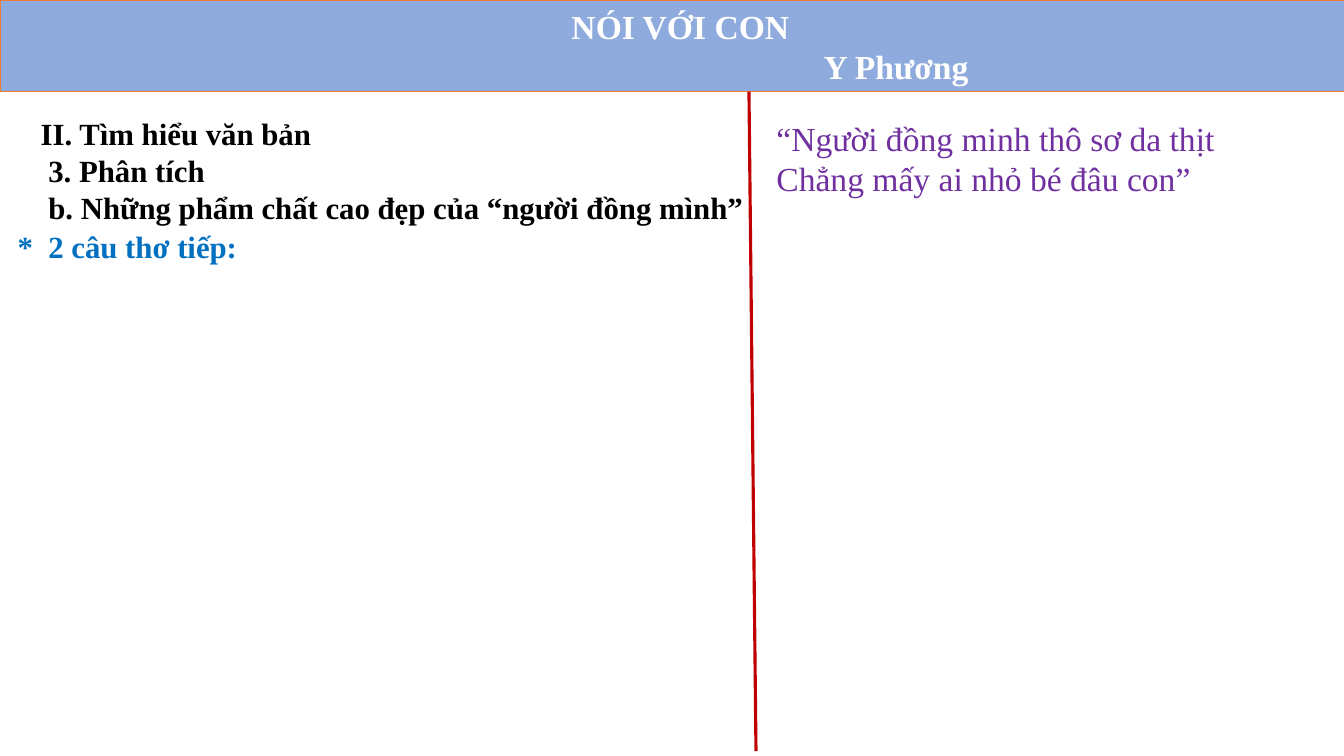
from pptx import Presentation
from pptx.dml.color import RGBColor
from pptx.enum.shapes import MSO_CONNECTOR
from pptx.enum.text import MSO_ANCHOR, MSO_AUTO_SIZE, PP_ALIGN
from pptx.util import Pt
from lxml import etree

COLORS = {"bar": "8FAADC", "bar_line": "ED7D31", "divider": "C00000",
          "title": "FFFFFF", "heading": "000000", "point": "0070C0", "poem": "7030A0"}
NS = "http://schemas.openxmlformats.org/drawingml/2006/main"


def rgb(name):
    return RGBColor.from_string(COLORS[name])


def write(tf, lines, size, color, bold, align):
    """Fill a text frame; each line is (text, left margin, first-line indent)."""
    tf.word_wrap = True
    tf.auto_size = MSO_AUTO_SIZE.NONE
    for i, (text, margin, indent) in enumerate(lines):
        p = tf.paragraphs[0] if i == 0 else tf.add_paragraph()
        p.text = text
        p.alignment = align
        p.line_spacing = 1.0
        p.font.name = "Times New Roman"
        p.font.size = Pt(size)
        p.font.bold = bold
        p.font.color.rgb = rgb(color)
        pPr = p._p.get_or_add_pPr()
        pPr.set("marL", str(Pt(margin)))
        pPr.set("indent", str(Pt(indent)))


prs = Presentation()
prs.slide_width, prs.slide_height = Pt(960), Pt(540)
s = prs.slides.add_slide(prs.slide_layouts.get_by_name("Title Only"))

# Title bar: poem name, with its author set off to the right
title = s.shapes.title
title.left, title.top, title.width, title.height = Pt(0), Pt(0), Pt(960), Pt(65.5)
title.fill.solid()
title.fill.fore_color.rgb = rgb("bar")
title.line.color.rgb = rgb("bar_line")
title.line.width = Pt(0.5)
title.text_frame.vertical_anchor = MSO_ANCHOR.MIDDLE
write(title.text_frame, [("NÓI VỚI CON", 12, 0), ("Y Phương", 320, 0)],
      24, "title", True, PP_ALIGN.CENTER)

# Divider between notes and poem
divider = s.shapes.add_connector(MSO_CONNECTOR.STRAIGHT, Pt(535), Pt(65.5), Pt(540), Pt(536.5))
divider.line.color.rgb = rgb("divider")
divider.line.width = Pt(2.25)
etree.SubElement(divider._element.spPr, f"{{{NS}}}effectLst")

# Notes on the left, quoted verse on the right
blocks = [
    ((22, 78.5, 546, 84), 22, "heading", True,
     [("II. Tìm hiểu văn bản", 0, 0),
      ("3. Phân tích", 5.5, 0),
      ("b. Những phẩm chất cao đẹp của “người đồng mình”", 5.5, 0)]),
    ((5.5, 159, 520, 34), 22, "point", True,
     [("*\t2 câu thơ tiếp:", 22, -22)]),
    ((547.5, 80.5, 410, 64), 24, "poem", False,
     [("“Người đồng minh thô sơ da thịt", 0, 0),
      ("Chẳng mấy ai nhỏ bé đâu con”", 0, 0)]),
]
for box, size, color, bold, lines in blocks:
    sp = s.shapes.add_textbox(*[Pt(v) for v in box])
    write(sp.text_frame, lines, size, color, bold, PP_ALIGN.LEFT)

prs.save("out.pptx")
